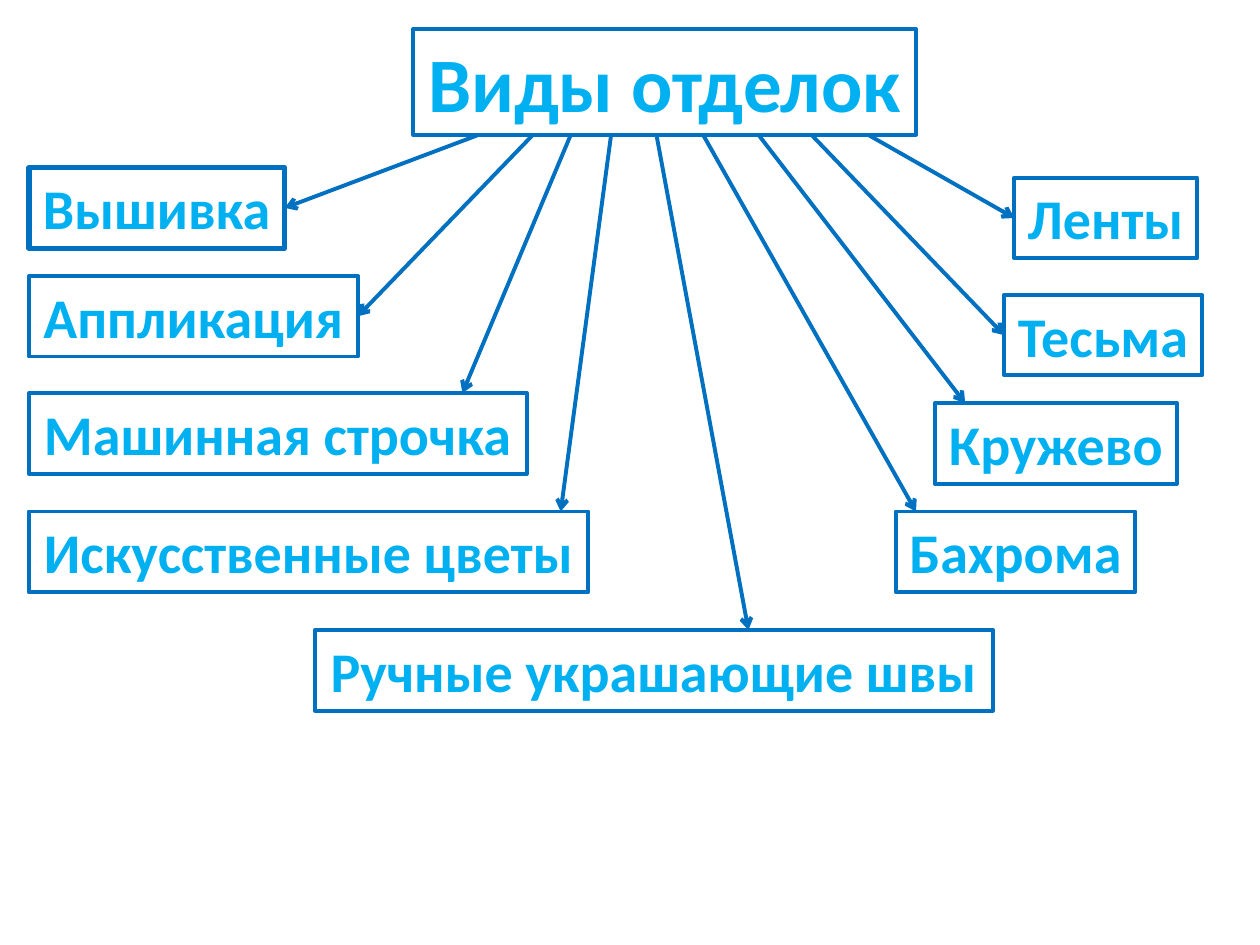
"""Build a slide that maps the kinds of garment trimmings."""
from lxml.etree import SubElement
from pptx import Presentation
from pptx.dml.color import RGBColor
from pptx.enum.shapes import MSO_CONNECTOR
from pptx.enum.text import MSO_AUTO_SIZE, PP_ALIGN
from pptx.oxml.ns import qn
from pptx.util import Inches, Pt

LINE_BLUE = RGBColor(0x00, 0x70, 0xC0)
TEXT_BLUE = RGBColor(0x00, 0xB0, 0xF0)
LEFT_SIDE, RIGHT_SIDE = 1, 3
TITLE_BOTTOM = 1.07
LABEL_HEIGHT = 0.64

presentation = Presentation()
presentation.slide_width = Inches(10)
presentation.slide_height = Inches(7.5)
slide = presentation.slides.add_slide(presentation.slide_layouts[6])


def add_label(text, left, top, width, height=LABEL_HEIGHT, size=32, border=2.25):
    shape = slide.shapes.add_textbox(
        Inches(left), Inches(top), Inches(width), Inches(height)
    )
    shape.line.color.rgb = LINE_BLUE
    shape.line.width = Pt(border)
    frame = shape.text_frame
    frame.word_wrap = False
    frame.auto_size = MSO_AUTO_SIZE.SHAPE_TO_FIT_TEXT
    paragraph = frame.paragraphs[0]
    paragraph.text = text
    paragraph.alignment = PP_ALIGN.CENTER
    font = paragraph.runs[0].font
    font.name = "Calibri"
    font.size = Pt(size)
    font.bold = True
    font.color.rgb = TEXT_BLUE
    return shape


def add_arrow(start_x, end_x, end_y):
    connector = slide.shapes.add_connector(
        MSO_CONNECTOR.STRAIGHT,
        Inches(start_x), Inches(TITLE_BOTTOM), Inches(end_x), Inches(end_y),
    )
    connector.line.color.rgb = LINE_BLUE
    connector.line.width = Pt(2.25)
    properties = connector._element.spPr
    SubElement(properties.find(qn("a:ln")), qn("a:tailEnd"), type="arrow")
    SubElement(properties, qn("a:effectLst"))
    return connector


add_label("Виды отделок", 3.28, 0.23, 3.99, height=0.84, size=44)

# text, left, top, width, border, arrow start x, arrow end x, joined side
trimmings = [
    ("Вышивка", 0.23, 1.33, 2.03, 3, 3.8, 2.26, RIGHT_SIDE),
    ("Аппликация", 0.23, 2.19, 2.61, 2.25, 4.23, 2.84, RIGHT_SIDE),
    ("Машинная строчка", 0.23, 3.12, 3.95, 2.25, 4.53, 3.67, None),
    ("Искусственные цветы", 0.23, 4.06, 4.44, 2.25, 4.85, 4.45, None),
    ("Ручные украшающие швы", 2.5, 5, 5.38, 2.25, 5.21, 5.94, None),
    ("Бахрома", 7.11, 4.06, 1.9, 2.25, 5.58, 7.27, None),
    ("Кружево", 7.42, 3.2, 1.92, 2.25, 6.02, 7.66, None),
    ("Тесьма", 7.97, 2.34, 1.57, 2.25, 6.44, 7.97, LEFT_SIDE),
    ("Ленты", 8.05, 1.41, 1.45, 2.25, 6.89, 8.05, LEFT_SIDE),
]
for text, left, top, width, border, start_x, end_x, side in trimmings:
    label = add_label(text, left, top, width, border=border)
    arrow = add_arrow(start_x, end_x, top)
    if side is not None:
        arrow.end_connect(label, side)

presentation.save("out.pptx")
